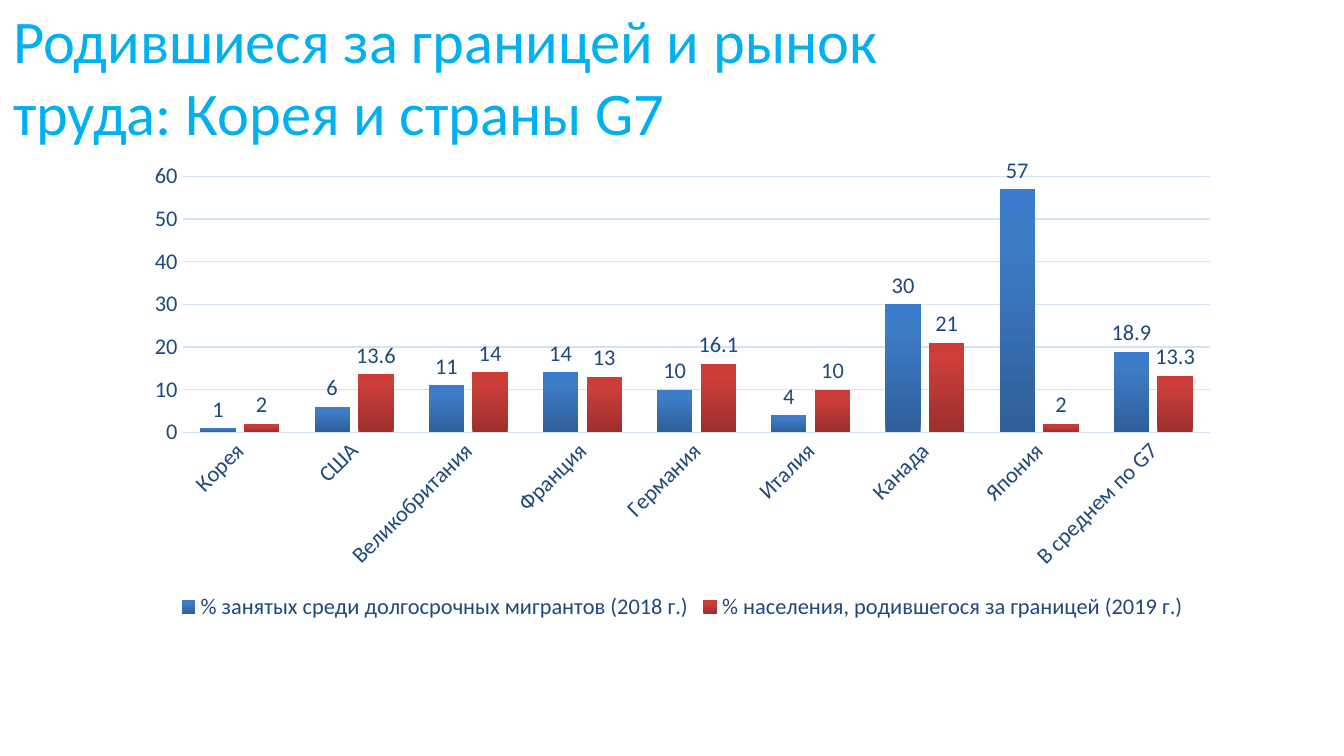
from copy import deepcopy
from dataclasses import dataclass

from pptx import Presentation
from pptx.chart.data import CategoryChartData
from pptx.chart.series import BarSeries
from pptx.dml.color import RGBColor
from pptx.enum.chart import (XL_CHART_TYPE, XL_LABEL_POSITION,
                             XL_LEGEND_POSITION, XL_TICK_MARK)
from pptx.enum.text import MSO_ANCHOR
from pptx.slide import Slide
from pptx.text.text import Font
from pptx.util import Cm, Pt

FONT_NAME = "Calibri"
TITLE_BLUE = RGBColor(0x00, 0xB0, 0xF0)
TEXT_NAVY = RGBColor(0x1F, 0x49, 0x7D)
GRID_BLUE = RGBColor(0xD4, 0xE3, 0xF4)
BLUE_SHADES = (RGBColor(0x2F, 0x5F, 0x99), RGBColor(0x3D, 0x7C, 0xC7),
               RGBColor(0x3A, 0x7C, 0xCB))
RED_SHADES = (RGBColor(0x9C, 0x2F, 0x2D), RGBColor(0xCB, 0x3E, 0x3A),
              RGBColor(0xCE, 0x3B, 0x37))
SHADE_POSITIONS = (0, 0.8, 1)

COUNTRIES = ("Корея", "США", "Великобритания", "Франция", "Германия",
             "Италия", "Канада", "Япония", "В среднем по G7")


@dataclass(frozen=True)
class Indicator:
    name: str
    values: tuple[float, ...]
    shades: tuple[RGBColor, ...]


INDICATORS = (
    Indicator("% занятых среди долгосрочных мигрантов (2018 г.)",
              (1, 6, 11, 14, 10, 4, 30, 57, 18.9), BLUE_SHADES),
    Indicator("% населения, родившегося за границей (2019 г.)",
              (2, 13.6, 14, 13, 16.1, 10, 21, 2, 13.3), RED_SHADES),
)


def style_font(font: Font, size: float, color: RGBColor) -> None:
    font.name = FONT_NAME
    font.size = Pt(size)
    font.color.rgb = color


def add_title(page: Slide, text: str) -> None:
    box = page.shapes.add_textbox(Cm(0), Cm(0.36), Cm(22.91), Cm(2.13))
    frame = box.text_frame
    frame.word_wrap = True
    frame.vertical_anchor = MSO_ANCHOR.MIDDLE
    para = frame.paragraphs[0]
    para.text = text
    style_font(para.font, 32.4, TITLE_BLUE)


def style_series(series: BarSeries, indicator: Indicator) -> None:
    # Shade the bars from dark at the foot to light at the top
    fill = series.format.fill
    fill.gradient()
    fill.gradient_angle = 90
    stop_list = series._element.xpath("c:spPr/a:gradFill/a:gsLst")[0]
    stop_list.append(deepcopy(stop_list[-1]))
    for stop, position, shade in zip(fill.gradient_stops, SHADE_POSITIONS,
                                     indicator.shades):
        stop.position = position
        stop.color.rgb = shade
    series.format.line.fill.background()
    series.invert_if_negative = False

    labels = series.data_labels
    labels.show_value = True
    labels.position = XL_LABEL_POSITION.OUTSIDE_END
    style_font(labels.font, 12, TEXT_NAVY)


def add_labour_chart(page: Slide) -> None:
    data = CategoryChartData()
    data.categories = COUNTRIES
    for indicator in INDICATORS:
        data.add_series(indicator.name, indicator.values)
    chart = page.shapes.add_chart(XL_CHART_TYPE.COLUMN_CLUSTERED, Cm(2.51),
                                  Cm(2.9), Cm(20.78), Cm(8.92), data).chart
    chart.has_title = False
    style_font(chart.font, 12, TEXT_NAVY)

    # Columns
    plot = chart.plots[0]
    plot.gap_width = 100
    plot.overlap = -24
    plot.vary_by_categories = False
    for series, indicator in zip(plot.series, INDICATORS):
        style_series(series, indicator)

    # Axes and gridlines
    for axis in (chart.category_axis, chart.value_axis):
        axis.major_tick_mark = XL_TICK_MARK.NONE
        axis.minor_tick_mark = XL_TICK_MARK.NONE
        style_font(axis.tick_labels.font, 12, TEXT_NAVY)
    chart.value_axis.minimum_scale = 0
    chart.value_axis.maximum_scale = 60
    chart.value_axis.major_unit = 10
    chart.value_axis.format.line.fill.background()
    chart.value_axis.has_major_gridlines = True
    for ruled in (chart.category_axis, chart.value_axis.major_gridlines):
        ruled.format.line.color.rgb = GRID_BLUE
        ruled.format.line.width = Pt(0.75)

    # Legend
    chart.has_legend = True
    chart.legend.position = XL_LEGEND_POSITION.BOTTOM
    chart.legend.include_in_layout = False
    style_font(chart.legend.font, 12, TEXT_NAVY)


def main() -> None:
    deck = Presentation()
    deck.slide_width = Cm(25.4)
    deck.slide_height = Cm(14.28)
    page = deck.slides.add_slide(deck.slide_layouts[6])
    add_title(page, "Родившиеся за границей и рынок\vтруда: Корея и страны G7")
    add_labour_chart(page)
    deck.save("out.pptx")


if __name__ == "__main__":
    main()
